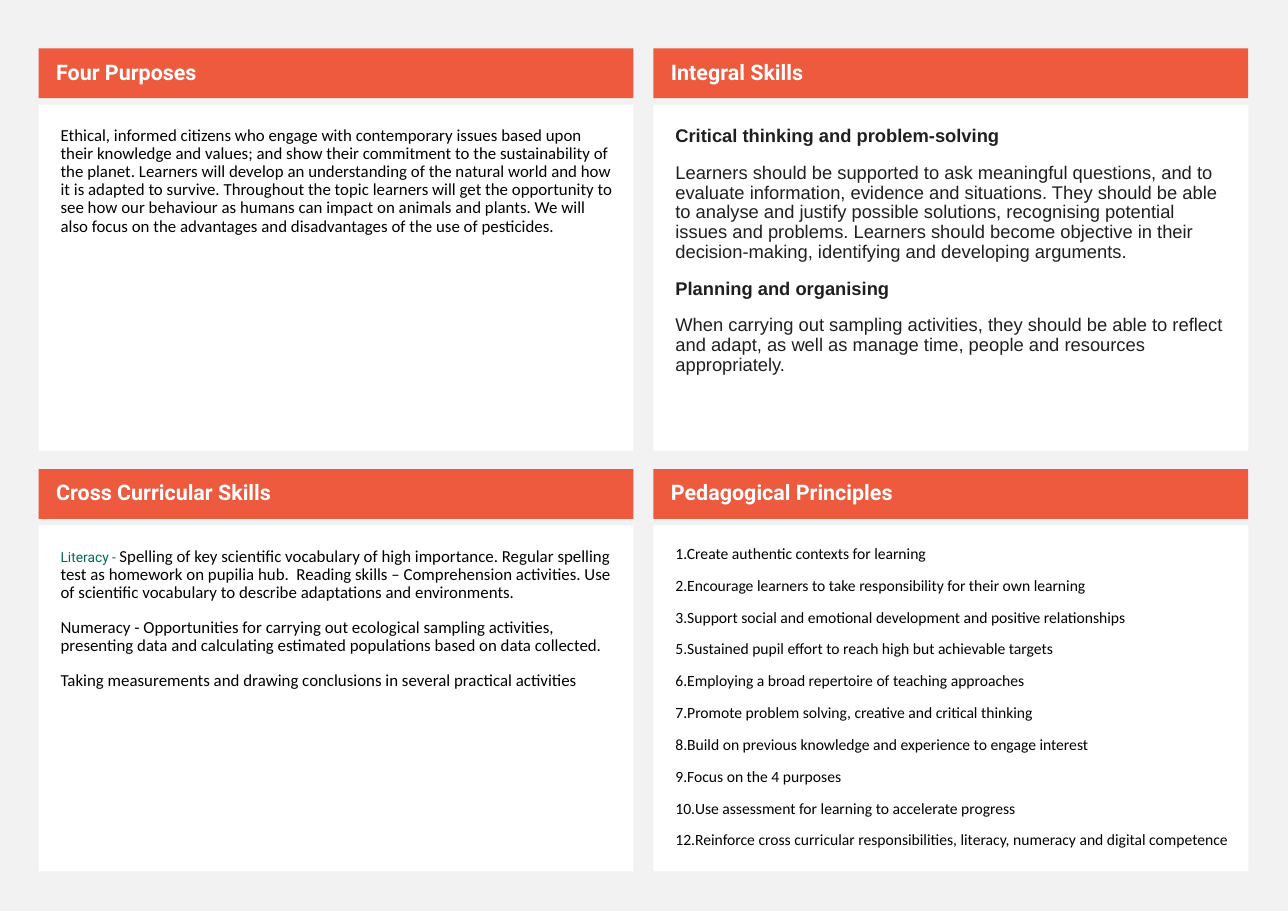
from lxml import etree
from pptx import Presentation
from pptx.dml.color import RGBColor
from pptx.enum.shapes import MSO_SHAPE
from pptx.enum.text import MSO_ANCHOR, MSO_AUTO_SIZE, PP_ALIGN
from pptx.oxml.ns import qn
from pptx.util import Inches, Pt

RECTANGLE = MSO_SHAPE.RECTANGLE
TOP, MIDDLE = MSO_ANCHOR.TOP, MSO_ANCHOR.MIDDLE
NO_AUTOFIT = MSO_AUTO_SIZE.NONE
LEFT = PP_ALIGN.LEFT
COMPARISON_LAYOUT = 4

LEFT_MARGIN, TOP_MARGIN = 0.35, 0.44
COLUMN_STEP, ROW_STEP = 5.58, 3.82
CARD_WIDTH, HEADING_HEIGHT, BODY_HEIGHT = 5.4, 0.45, 3.14
BODY_OFFSET = 0.51
HEADING_INSETS = (0.16, 0.05, 0.1, 0.05)
BODY_INSETS = (0.2, 0.2, 0.18, 0.2)

HEADING = ("Roboto", 14, "FFFFFF", True)
PLAIN = ("Calibri", 11, "000000", False)
LEAD_IN = ("Roboto", 9, "006758", False)
SKILL_NAME = ("Arial", 12, "1F1F1F", True)
SKILL_TEXT = ("Arial", 12, "1F1F1F", False)
PRINCIPLE = ("Calibri", 10.2, "000000", False)

PURPOSES = [
    [("Ethical, informed citizens who engage with contemporary issues based upon their knowledge and values; "
      "and show their commitment to the sustainability of the planet. Learners will develop an understanding "
      "of the natural world and how it is adapted to survive. Throughout the topic learners will get the "
      "opportunity to see how our behaviour as humans can impact on animals and plants. We will also focus "
      "on the advantages and disadvantages of the use of pesticides.", PLAIN)],
]
INTEGRAL_SKILLS = [
    [("Critical thinking and problem-solving", SKILL_NAME)],
    [("Learners should be supported to ask meaningful questions, and to evaluate information, evidence and "
      "situations. They should be able to analyse and justify possible solutions, recognising potential "
      "issues and problems. Learners should become objective in their decision-making, identifying and "
      "developing arguments.", SKILL_TEXT)],
    [("Planning and organising", SKILL_NAME)],
    [("When carrying out sampling activities, they should be able to reflect and adapt, as well as manage "
      "time, people and resources appropriately.", SKILL_TEXT)],
]
CROSS_CURRICULAR = [
    [("Literacy - ", LEAD_IN),
     ("Spelling of key scientific vocabulary of high importance. Regular spelling test as homework on "
      "pupilia hub.  Reading skills – Comprehension activities. Use of scientific vocabulary to describe "
      "adaptations and environments.", PLAIN)],
    [("Numeracy - Opportunities for carrying out ecological sampling activities, presenting data and "
      "calculating estimated populations based on data collected.", PLAIN)],
    [("Taking measurements and drawing conclusions in several practical activities", PLAIN)],
]
PRINCIPLES = [[(text, PRINCIPLE)] for text in (
    "1.Create authentic contexts for learning",
    "2.Encourage learners to take responsibility for their own learning",
    "3.Support social and emotional development and positive relationships",
    "5.Sustained pupil effort to reach high but achievable targets",
    "6.Employing a broad repertoire of teaching approaches",
    "7.Promote problem solving, creative and critical thinking",
    "8.Build on previous knowledge and experience to engage interest",
    "9.Focus on the 4 purposes",
    "10.Use assessment for learning to accelerate progress",
    "12.Reinforce cross curricular responsibilities, literacy, numeracy and digital competence",
)]
CARDS = [
    ("Four Purposes", PURPOSES, 0.9),
    ("Integral Skills", INTEGRAL_SKILLS, 0.9),
    ("Cross Curricular Skills", CROSS_CURRICULAR, 0.9),
    ("Pedagogical Principles", PRINCIPLES, 0.8),
]


def paint(fill, color):
    """Make a fill solid in the given hex colour."""
    fill.solid()
    fill.fore_color.rgb = RGBColor.from_string(color)


def style_font(font, style):
    """Apply a (name, size, colour, bold) style to a font."""
    font.name, size, color, font.bold = style
    font.size = Pt(size)
    paint(font.fill, color)


def remove_bullet(para):
    """Clear the bullet and indent inherited from the layout."""
    properties = para._p.get_or_add_pPr()
    properties.set("marL", "0")
    properties.set("indent", "0")
    etree.SubElement(properties, qn("a:buNone"))


def write_paragraphs(frame, paragraphs, line_spacing):
    """Write paragraphs, each a list of (text, style) spans."""
    for number, spans in enumerate(paragraphs):
        para = frame.add_paragraph() if number else frame.paragraphs[0]
        remove_bullet(para)
        para.alignment = LEFT
        para.line_spacing = line_spacing
        para.space_before = Pt(11)
        for text, style in spans:
            span = para.add_run()
            span.text = text
            if len(spans) > 1:
                style_font(span.font, style)
        if len(spans) == 1:
            style_font(para.font, spans[0][1])


def format_frame(frame, insets, anchor):
    """Set the wrapping, anchor and insets of a text frame."""
    frame.word_wrap = True
    frame.auto_size = NO_AUTOFIT
    frame.vertical_anchor = anchor
    (frame.margin_left, frame.margin_top,
     frame.margin_right, frame.margin_bottom) = map(Inches, insets)


def add_heading(page, left, top, title):
    """Add the coloured heading bar of a card."""
    bar = page.shapes.add_shape(RECTANGLE, Inches(left), Inches(top),
                                Inches(CARD_WIDTH), Inches(HEADING_HEIGHT))
    bar.shadow.inherit = False
    bar.line.fill.background()
    paint(bar.fill, "ED5A3E")
    format_frame(bar.text_frame, HEADING_INSETS, MIDDLE)
    write_paragraphs(bar.text_frame, [[(title, HEADING)]], 0.9)


def fill_body(body, left, top, paragraphs, line_spacing):
    """Move a body placeholder into its card and write its text."""
    body.left, body.top = Inches(left), Inches(top)
    body.width, body.height = Inches(CARD_WIDTH), Inches(BODY_HEIGHT)
    paint(body.fill, "FFFFFF")
    format_frame(body.text_frame, BODY_INSETS, TOP)
    write_paragraphs(body.text_frame, paragraphs, line_spacing)


def main():
    """Build the page of four cards and save it."""
    deck = Presentation()
    deck.slide_width, deck.slide_height = Inches(11.69), Inches(8.27)
    page = deck.slides.add_slide(deck.slide_layouts[COMPARISON_LAYOUT])
    paint(page.background.fill, "F2F2F2")
    title, *bodies = page.placeholders
    title.element.getparent().remove(title.element)
    for number, (body, card) in enumerate(zip(bodies, CARDS)):
        heading, paragraphs, line_spacing = card
        row, column = divmod(number, 2)
        left = LEFT_MARGIN + column * COLUMN_STEP
        top = TOP_MARGIN + row * ROW_STEP
        add_heading(page, left, top, heading)
        fill_body(body, left, top + BODY_OFFSET, paragraphs, line_spacing)
    deck.save("out.pptx")


if __name__ == "__main__":
    main()
